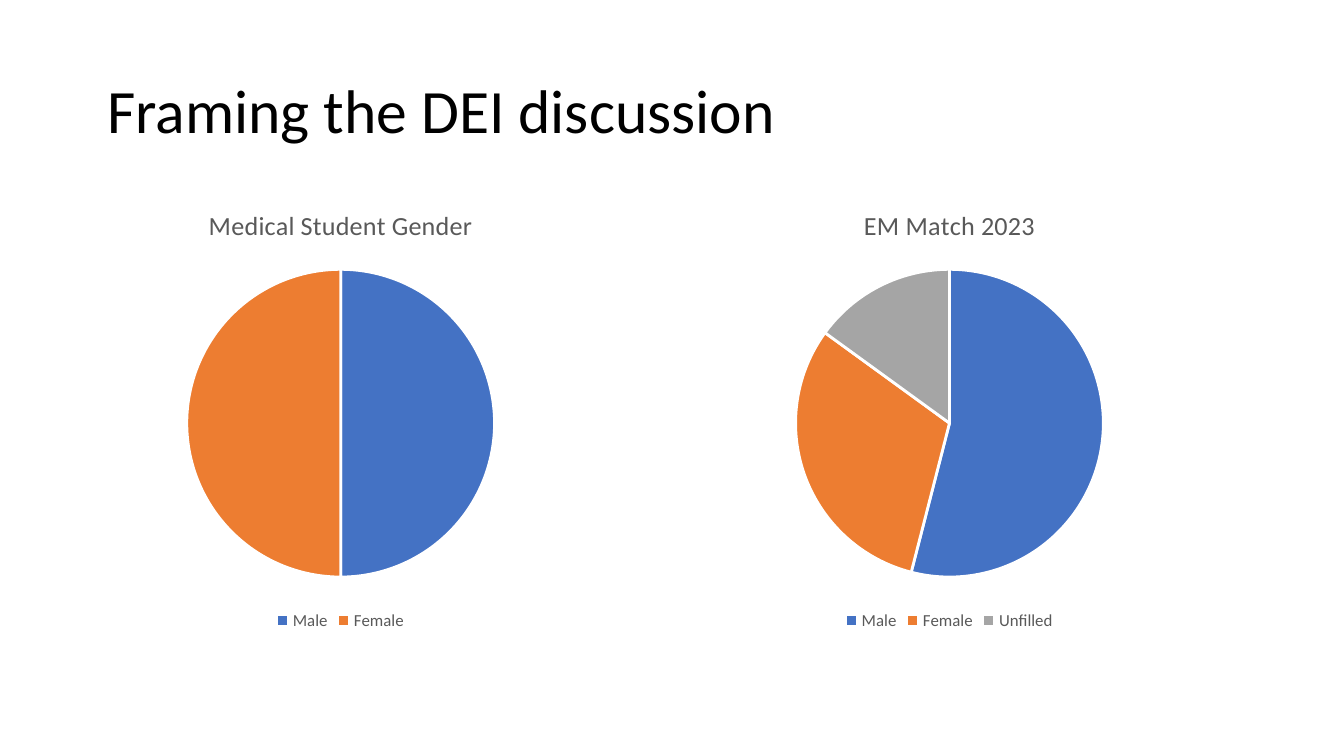
import pptx
import pptx.chart.data
import pptx.dml.color
import pptx.enum.chart
import pptx.enum.text
import pptx.util

RGBColor = pptx.dml.color.RGBColor
BLACK = RGBColor(0x00, 0x00, 0x00)
WHITE = RGBColor(0xFF, 0xFF, 0xFF)
GREY_TEXT = RGBColor(0x59, 0x59, 0x59)
BLUE = RGBColor(0x44, 0x72, 0xC4)
ORANGE = RGBColor(0xED, 0x7D, 0x31)
GREY = RGBColor(0xA5, 0xA5, 0xA5)

SLICE_COLORS = {"Male": BLUE, "Female": ORANGE, "Unfilled": GREY}
FONT = "Calibri"


def set_font(font, size, color=BLACK):
    font.name = FONT
    font.size = pptx.util.Pt(size)
    font.bold = False
    font.color.rgb = color


def write(tf, text, size, color=BLACK, line_spacing=None):
    p = tf.paragraphs[0]
    p.line_spacing = line_spacing
    r = p.add_run()
    r.text = text
    set_font(r.font, size, color)


class Deck:
    """Current 16:9 slide, addressed on a grid of 100 columns by 100 rows."""

    def __init__(self, width):
        self.prs = pptx.Presentation()
        self.prs.slide_width = pptx.util.Inches(width)
        self.prs.slide_height = pptx.util.Inches(width * 9 / 16)
        self.s = self.prs.slides.add_slide(self.prs.slide_layouts[6])
        self.s.background.fill.solid()
        self.s.background.fill.fore_color.rgb = WHITE

    def box(self, col, row, cols, rows):
        w, h = self.prs.slide_width / 100, self.prs.slide_height / 100
        return [round(v) for v in (col * w, row * h, cols * w, rows * h)]

    def title(self, text, *grid):
        tf = self.s.shapes.add_textbox(*self.box(*grid)).text_frame
        tf.word_wrap = True
        tf.vertical_anchor = pptx.enum.text.MSO_ANCHOR.MIDDLE
        tf.margin_left = tf.margin_right = pptx.util.Inches(0.1)
        tf.margin_top = tf.margin_bottom = pptx.util.Inches(0.05)
        write(tf, text, size=33, line_spacing=0.9)

    def pie(self, title, values, *grid):
        data = pptx.chart.data.CategoryChartData()
        data.categories = list(values)
        data.add_series(title, list(values.values()))
        chart = self.s.shapes.add_chart(
            pptx.enum.chart.XL_CHART_TYPE.PIE, *self.box(*grid), data).chart
        set_font(chart.font, 10)

        # Chart title and legend
        chart.has_title = True
        write(chart.chart_title.text_frame, title, size=14, color=GREY_TEXT)
        chart.chart_title.include_in_layout = False
        chart.has_legend = True
        chart.legend.position = pptx.enum.chart.XL_LEGEND_POSITION.BOTTOM
        chart.legend.include_in_layout = False
        set_font(chart.legend.font, 9, GREY_TEXT)

        # Slices
        plot = chart.plots[0]
        plot.vary_by_categories = True
        for i, name in enumerate(values):
            fmt = plot.series[0].points[i].format
            fmt.fill.solid()
            fmt.fill.fore_color.rgb = SLICE_COLORS[name]
            fmt.line.color.rgb = WHITE
            fmt.line.width = pptx.util.Pt(1.5)


def main():
    deck = Deck(10)
    deck.title("Framing the DEI discussion", 7, 5.33, 86.2, 19.38)

    # Two equal pies side by side
    pies = [
        ("Medical Student Gender", {"Male": 50, "Female": 50}),
        ("EM Match 2023", {"Male": 54, "Female": 31, "Unfilled": 15}),
    ]
    left, width = 2.7, 45.3
    for i, (title, values) in enumerate(pies):
        deck.pie(title, values, left + i * width, 24.71, width, 59.38)

    deck.prs.save("out.pptx")


if __name__ == "__main__":
    main()
